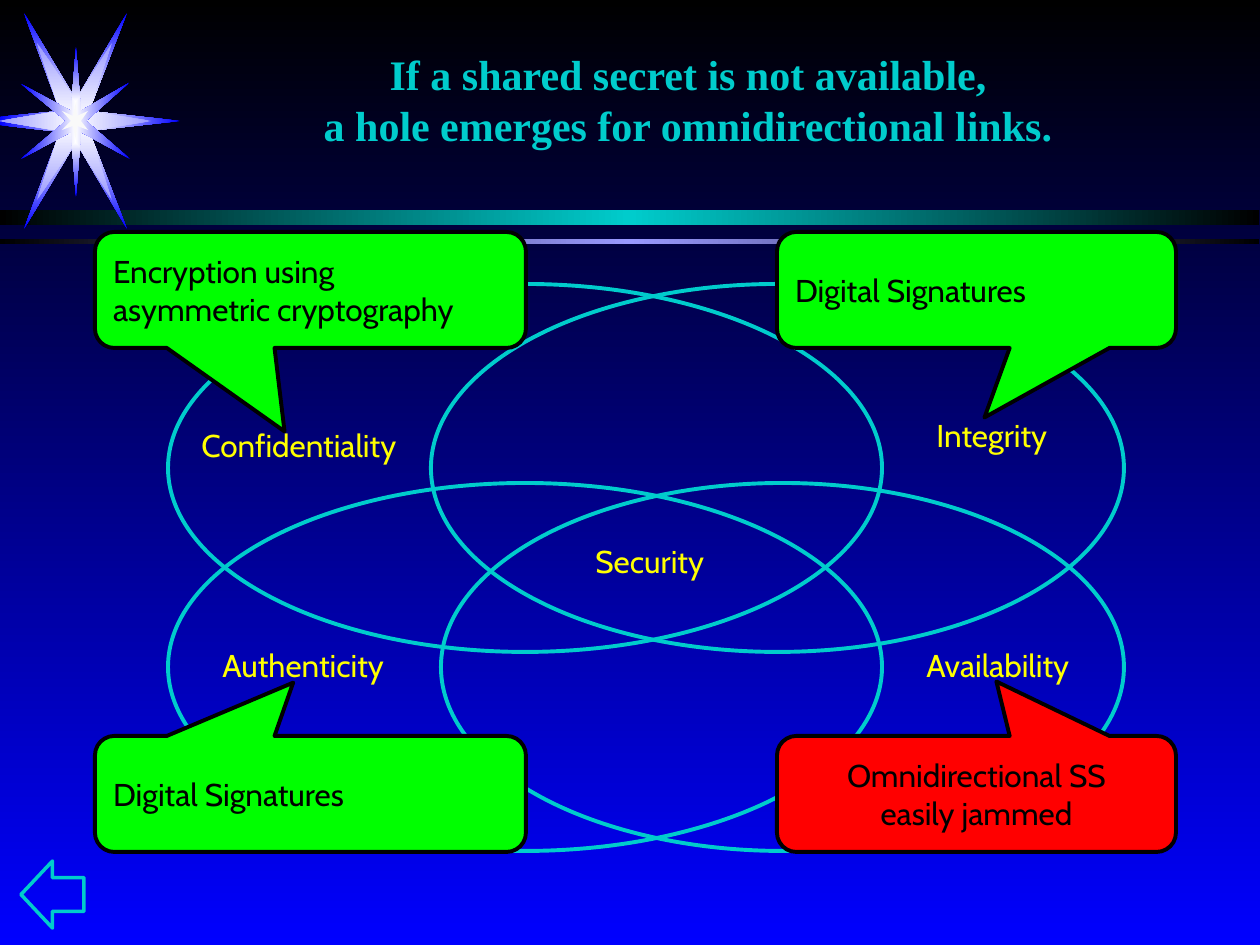
from dataclasses import dataclass

from lxml import etree
from pptx import Presentation
from pptx.dml.color import RGBColor
from pptx.enum.shapes import MSO_SHAPE
from pptx.enum.text import MSO_ANCHOR, MSO_AUTO_SIZE, PP_ALIGN
from pptx.oxml.ns import qn
from pptx.util import Emu, Inches, Pt

RECTANGLE, ELLIPSE = MSO_SHAPE.RECTANGLE, MSO_SHAPE.OVAL
CALLOUT, DOWN_ARROW = MSO_SHAPE.ROUNDED_RECTANGULAR_CALLOUT, MSO_SHAPE.DOWN_ARROW
MIDDLE, FIT_SHAPE = MSO_ANCHOR.MIDDLE, MSO_AUTO_SIZE.SHAPE_TO_FIT_TEXT
LEFT, CENTER = PP_ALIGN.LEFT, PP_ALIGN.CENTER
PX = Inches(1) / 126


@dataclass(frozen=True)
class Theme:
    black: str = "000000"
    blue: str = "0000FF"
    white: str = "FFFFFF"
    glow: str = "F9F9F9"
    teal: str = "00CCCC"
    lilac: str = "9999FF"
    yellow: str = "FFFF00"
    green: str = "00FF00"
    red: str = "FF0000"
    title_font: str = "Times New Roman"
    body_font: str = "Cabin"
    title_size: int = 24
    body_size: int = 18
    outline: float = 2.25
    arrow_outline: float = 2


THEME = Theme()

# Star outlines, each point measured from the star's centre
STAR_LAYERS = [
    ([(-16, -10), (-52, -108), (0, -21), (51, -108), (13, -10), (104, 0), (13, 10),
      (51, 108), (0, 21), (-52, 108), (-16, 11), (-77, 4), (-77, -4)], THEME.blue),
    ([(-16, -10), (-39, -78), (0, -21), (36, -78), (13, -10), (75, 0),
      (13, 10), (36, 79), (0, 21), (-39, 79), (-16, 10), (-77, 0)], THEME.lilac),
    ([(-55, -37), (-5, -10), (0, -74), (5, -10), (53, -38), (10, 0),
      (54, 38), (5, 11), (0, 76), (-5, 11), (-55, 38), (-10, 0)], THEME.blue),
    ([(-14, -10), (-3, -5), (0, -19), (1, -5), (12, -10), (5, 0),
      (12, 9), (1, 5), (0, 19), (-3, 5), (-14, 9), (-5, 0)], None),
]


def emu(*lengths):
    return [Emu(round(length * PX)) for length in lengths]


def paint_gradient(owner, colors, angle=None):
    """Spread the colours evenly, along an angle or outwards from the centre."""
    owner_fill = owner.background.fill if hasattr(owner, "background") else owner.fill
    owner_fill.gradient()
    gradient = owner.element.xpath(".//a:gradFill")[0]
    for child in list(gradient):
        gradient.remove(child)
    stops = etree.SubElement(gradient, qn("a:gsLst"))
    for index, color in enumerate(colors):
        position = round(100000 * index / (len(colors) - 1))
        stop = etree.SubElement(stops, qn("a:gs"), pos=str(position))
        etree.SubElement(stop, qn("a:srgbClr"), val=color)
    if angle is None:
        way = etree.SubElement(gradient, qn("a:path"), path="rect")
        sides = dict.fromkeys("ltrb", "50000")
        etree.SubElement(way, qn("a:fillToRect"), **sides)
    else:
        etree.SubElement(gradient, qn("a:lin"), ang=str(angle * 60000), scaled="0")


def style_shape(shape, fill=None, line=None, width=THEME.outline):
    shape.shadow.inherit = False
    if fill:
        shape.fill.solid()
        shape.fill.fore_color.rgb = RGBColor.from_string(fill)
    else:
        shape.fill.background()
    if line:
        shape.line.color.rgb = RGBColor.from_string(line)
        shape.line.width = Pt(width)
    else:
        shape.line.fill.background()


def write_text(shape, text, color, align=LEFT, font=THEME.body_font,
               size=THEME.body_size, bold=False, wrap=False):
    frame = shape.text_frame
    frame.text = text
    frame.word_wrap = wrap
    for para in frame.paragraphs:
        para.alignment = align
        for span in para.runs:
            span.font.name = font
            span.font.size = Pt(size)
            span.font.bold = bold
            span.font.color.rgb = RGBColor.from_string(color)
    return frame


def add_bars(page, box):
    left, top, width, _ = box
    for offset, height, color in [(0, 15, THEME.teal), (29, 5, THEME.lilac)]:
        bar = page.shapes.add_shape(RECTANGLE, *emu(left, top + offset, width, height))
        style_shape(bar)
        paint_gradient(bar, [THEME.black, color, THEME.black], 0)


def add_star(page, box):
    left, top, width, height = box
    center_x, center_y = left + 77, top + height // 2
    for points, rim in STAR_LAYERS:
        corners = [(center_x + x, center_y + y) for x, y in points]
        builder = page.shapes.build_freeform(*corners[0], scale=PX)
        builder.add_line_segments(corners[1:], close=True)
        star = builder.convert_to_shape()
        style_shape(star, THEME.glow)
        if rim:
            paint_gradient(star, [THEME.white, rim])


def add_venn(page, box):
    left, top, _, _ = box
    # Overlapping ellipses
    for x, y, width in [(0, 199, 714), (273, 199, 683), (263, 0, 693), (0, 0, 714)]:
        ellipse = page.shapes.add_shape(ELLIPSE, *emu(left + x, top + y, width, 368))
        style_shape(ellipse, line=THEME.teal)
    # Names of the security goals
    labels = [
        ("Confidentiality", 21, 136, 223),
        ("Integrity", 756, 126, 144),
        ("Authenticity", 42, 356, 189),
        ("Availability", 746, 356, 173),
        ("Security", 415, 252, 136),
    ]
    for text, x, y, width in labels:
        label = page.shapes.add_textbox(*emu(left + x, top + y, width, 50))
        write_text(label, text, THEME.yellow).auto_size = FIT_SHAPE


def add_callouts(page, box):
    left, top, width, height = box
    left_width, right_width, callout_height = 431, 399, 116
    right, bottom = width - right_width, height - callout_height
    callouts = [
        ("Encryption using\nasymmetric cryptography", 0, 0, left_width,
         (-0.06, 1.22), THEME.green, LEFT),
        ("Digital Signatures", right, 0, right_width, (0.02, 1.1), THEME.green, LEFT),
        ("Digital Signatures", 0, bottom, left_width, (-0.04, -0.96), THEME.green, LEFT),
        ("Omnidirectional SS\neasily jammed", right, bottom, right_width,
         (0.05, -0.97), THEME.red, CENTER),
    ]
    for text, x, y, callout_width, tip, fill, align in callouts:
        callout = page.shapes.add_shape(
            CALLOUT, *emu(left + x, top + y, callout_width, callout_height))
        callout.adjustments[0], callout.adjustments[1] = tip
        style_shape(callout, fill, THEME.black)
        write_text(callout, text, THEME.black, align).vertical_anchor = MIDDLE


def add_title(page, box):
    title = page.shapes.add_textbox(*emu(*box))
    frame = write_text(
        title,
        "If a shared secret is not available,\na hole emerges for omnidirectional links.",
        THEME.teal, CENTER, THEME.title_font, THEME.title_size, bold=True, wrap=True)
    frame.vertical_anchor = MIDDLE


def add_back_arrow(page, box):
    arrow = page.shapes.add_shape(DOWN_ARROW, *emu(*box))
    arrow.rotation = 90
    style_shape(arrow, line=THEME.teal, width=THEME.arrow_outline)


def main():
    deck = Presentation()
    deck.slide_width, deck.slide_height = emu(1260, 945)
    page = deck.slides.add_slide(deck.slide_layouts[6])
    paint_gradient(page, [THEME.black, THEME.blue], 90)
    add_bars(page, (0, 210, 1259, 34))
    add_star(page, (-1, 13, 181, 216))
    add_venn(page, (168, 284, 956, 567))
    add_callouts(page, (95, 232, 1081, 620))
    add_title(page, (231, 0, 914, 198))
    add_back_arrow(page, (19, 863, 67, 63))
    deck.save("out.pptx")


if __name__ == "__main__":
    main()
